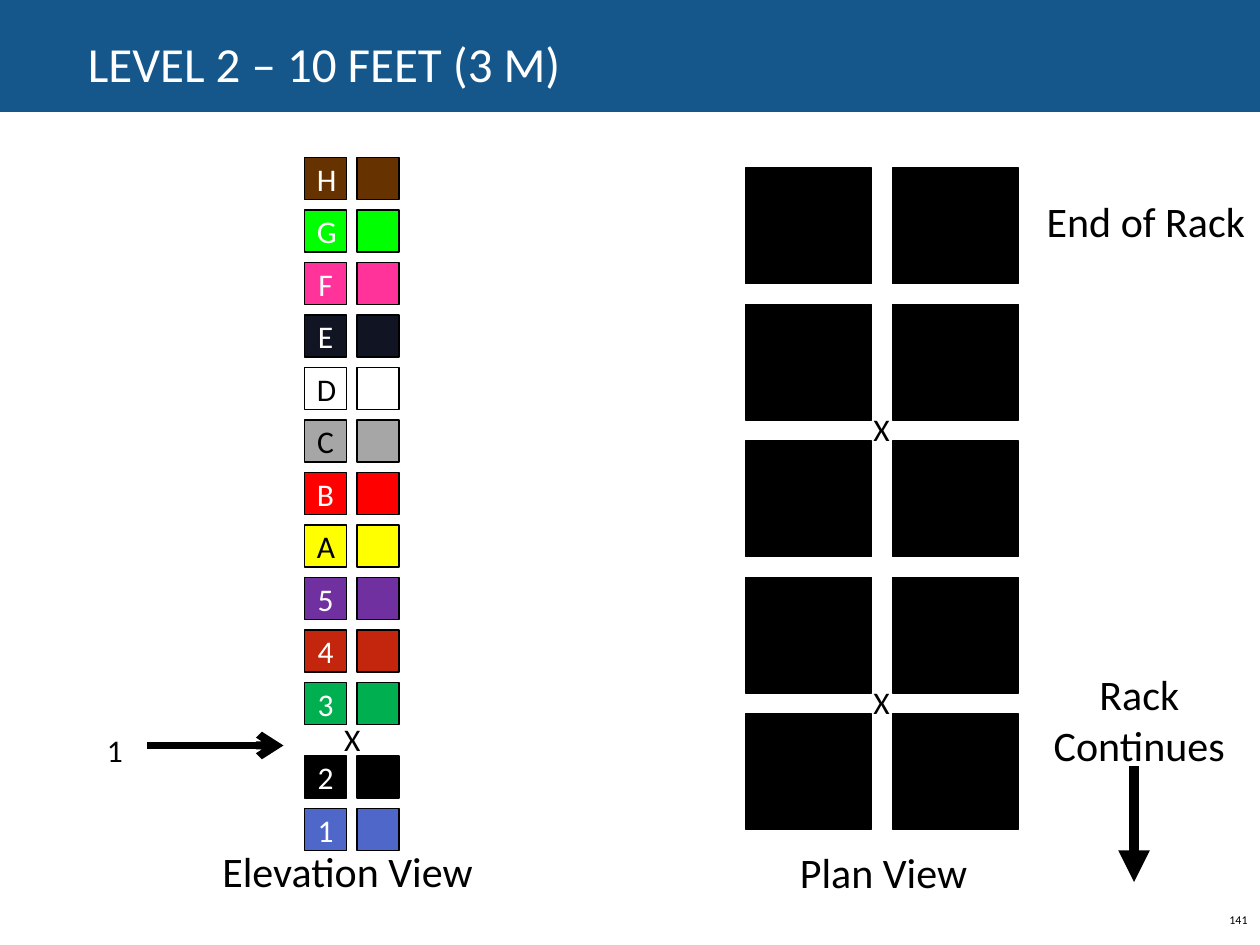
from lxml import etree
from pptx import Presentation
from pptx.dml.color import RGBColor
from pptx.enum.shapes import MSO_CONNECTOR as CONNECTOR, MSO_SHAPE as SHAPE
from pptx.enum.text import MSO_ANCHOR as ANCHOR, PP_ALIGN as ALIGN
from pptx.oxml.ns import qn
from pptx.util import Pt

BLACK, WHITE, BAND = "000000", "FFFFFF", "15578A"
LEVELS = [
    ("H", "663300", WHITE), ("G", "00FF00", WHITE), ("F", "FF3399", WHITE),
    ("E", "111422", WHITE), ("D", "FFFFFF", BLACK), ("C", "A6A6A6", BLACK),
    ("B", "FF0000", WHITE), ("A", "FFFF00", BLACK), ("5", "7030A0", WHITE),
    ("4", "C3260C", WHITE), ("3", "00B050", WHITE), ("2", "000000", WHITE),
    ("1", "4E67C8", WHITE),
]


def color(value):
    return RGBColor.from_string(value)


class RackSlide:
    font = "Calibri"

    def __init__(self, presentation):
        self.slide = presentation.slides.add_slide(presentation.slide_layouts[6])
        self.shapes = self.slide.shapes

    def set_text(self, shape, text, size, ink, align):
        shape.text_frame.text = text
        paragraph = shape.text_frame.paragraphs[0]
        paragraph.alignment = align
        font = paragraph.runs[0].font
        font.name, font.size = self.font, Pt(size)
        font.color.rgb = color(ink)
        return paragraph

    def box(self, left, top, width, height, fill, line=BLACK, text="", ink=WHITE):
        shape = self.shapes.add_shape(
            SHAPE.RECTANGLE, Pt(left), Pt(top), Pt(width), Pt(height))
        shape.shadow.inherit = False
        shape.fill.solid()
        shape.fill.fore_color.rgb = color(fill)
        if line:
            shape.line.color.rgb = color(line)
            shape.line.width = Pt(1)
        else:
            shape.line.fill.background()
        if text:
            shape.text_frame.vertical_anchor = ANCHOR.MIDDLE
            self.set_text(shape, text, 18, ink, ALIGN.CENTER)

    def label(self, text, left, top, width, height, size=24, ink=BLACK,
              align=ALIGN.LEFT, anchor=ANCHOR.TOP, wrap=True, spacing=None):
        shape = self.shapes.add_textbox(Pt(left), Pt(top), Pt(width), Pt(height))
        shape.text_frame.word_wrap = wrap
        shape.text_frame.vertical_anchor = anchor
        paragraph = self.set_text(shape, text, size, ink, align)
        if spacing:
            paragraph.line_spacing = spacing

    def arrow(self, start, end, width, head):
        connector = self.shapes.add_connector(
            CONNECTOR.STRAIGHT, *(Pt(value) for value in start + end))
        connector.line.color.rgb = color(BLACK)
        connector.line.width = Pt(width)
        properties = connector._element.spPr
        line = properties.find(qn("a:ln"))
        etree.SubElement(line, qn("a:tailEnd"), type=head)
        etree.SubElement(properties, qn("a:effectLst"))


def main():
    presentation = Presentation()
    presentation.slide_width, presentation.slide_height = Pt(720), Pt(540)
    rack = RackSlide(presentation)

    rack.box(0, 0, 720, 64, BAND, line=None)
    rack.label("LEVEL 2 – 10 FEET (3 M)", 43.2, -6.5, 648, 90, size=28, ink=WHITE,
               anchor=ANCHOR.MIDDLE, spacing=0.85)
    rack.label("141", 691, 511, 29, 29, size=6.8, align=ALIGN.RIGHT,
               anchor=ANCHOR.MIDDLE)

    aisle_row = 11
    for row, (name, fill, ink) in enumerate(LEVELS):
        top = 90 + 30 * row + (12 if row >= aisle_row else 0)
        rack.box(174, top, 24, 24, fill, text=name, ink=ink)
        rack.box(204, top, 24, 24, fill)

    for row in range(5):
        for left in (426, 510):
            rack.box(left, 96 + 78 * row, 72, 66, BLACK)

    rack.label("Elevation View", 120, 479.5, 163.5, 36, wrap=False)
    rack.label("Plan View", 450, 480, 114.5, 36, wrap=False)
    rack.label("End of Rack", 591, 108, 131, 36, wrap=False)
    rack.label("Rack Continues", 588, 378.5, 126, 65.5, align=ALIGN.CENTER)
    rack.arrow((648, 438), (648, 504), 6, "triangle")

    for left, top in ((492, 386.5), (492, 231), (189.5, 408)):
        rack.label("X", left, top, 24, 29, size=18)
    rack.arrow((84, 426), (162, 426), 4.5, "arrow")
    rack.label("1", 54, 414, 30, 29, size=18)

    presentation.save("out.pptx")


if __name__ == "__main__":
    main()
